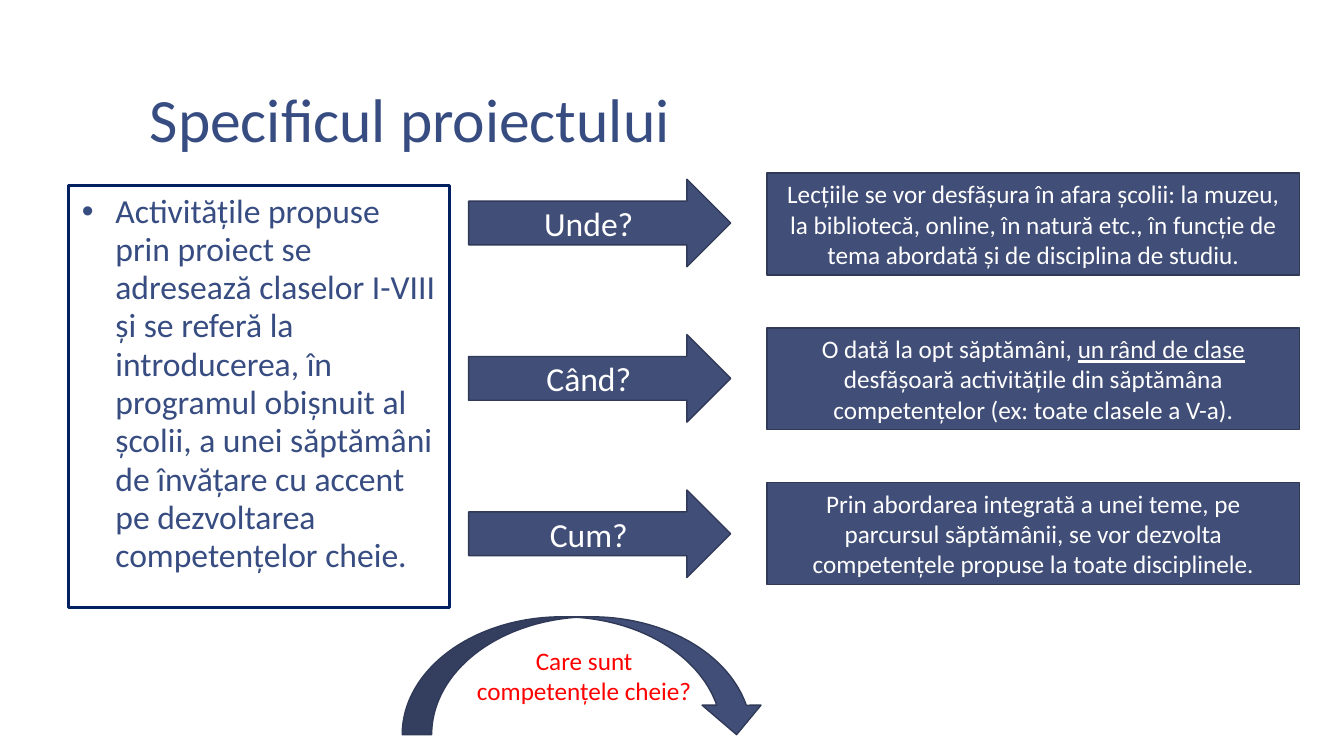
from pptx import Presentation
from pptx.dml.color import RGBColor
from pptx.enum.shapes import MSO_SHAPE
from pptx.enum.text import MSO_ANCHOR, MSO_AUTO_SIZE, PP_ALIGN
from pptx.oxml import parse_xml
from pptx.oxml.ns import nsdecls
from pptx.util import Pt

# Content
TITLE = "Specificul proiectului"
INTRO = ("Activitățile propuse prin proiect se adresează claselor I-VIII și se referă "
         "la introducerea, în programul obișnuit al școlii, a unei săptămâni de învățare "
         "cu accent pe dezvoltarea competențelor cheie.")
# Question and its answer, given as (text, underlined) runs
ROWS = [
    ("Unde?", [("Lecțiile se vor desfășura în afara școlii: la muzeu, la bibliotecă, online, "
                "în natură etc., în funcție de tema abordată și de disciplina de studiu.", False)]),
    ("Când?", [("O dată la opt săptămâni, ", False),
               ("un rând de clase ", True),
               ("desfășoară activitățile din săptămâna competențelor "
                "(ex: toate clasele a V-a).", False)]),
    ("Cum?", [("Prin abordarea integrată a unei teme, pe parcursul săptămânii, se vor dezvolta "
               "competențele propuse la toate disciplinele.", False)]),
]
KEY_QUESTION = ["Care sunt", "competențele cheie?"]

FONT = "Calibri"
BLUE, FILL, EDGE, NAVY, WHITE, RED = "374C81", "414E77", "303A58", "002060", "FFFFFF", "FF0000"


def color(value):
    return RGBColor.from_string(value)


def write(p, text, size=18, ink=WHITE, align=PP_ALIGN.CENTER, spacing=None, underline=None):
    """Add a formatted run to a paragraph."""
    p.alignment = align
    if spacing:
        p.line_spacing = spacing
    r = p.add_run()
    r.text = text
    r.font.name, r.font.size, r.font.underline = FONT, Pt(size), underline
    r.font.color.rgb = color(ink)


def add_box(s, kind, left, top, width, height, fill=FILL, line=EDGE, weight=1):
    sp = s.shapes.add_shape(kind, Pt(left), Pt(top), Pt(width), Pt(height))
    sp.shadow.inherit = False
    if fill:
        sp.fill.solid()
        sp.fill.fore_color.rgb = color(fill)
    else:
        sp.fill.background()
    sp.line.color.rgb = color(line)
    sp.line.width = Pt(weight)
    tf = sp.text_frame
    tf.word_wrap = True
    tf.vertical_anchor = MSO_ANCHOR.MIDDLE
    return tf


def set_insets(tf, left, top, right, bottom):
    tf.margin_left, tf.margin_top = Pt(left), Pt(top)
    tf.margin_right, tf.margin_bottom = Pt(right), Pt(bottom)


prs = Presentation()
prs.slide_width, prs.slide_height = Pt(960), Pt(540)
s = prs.slides.add_slide(prs.slide_layouts[5])

# Title
title = s.shapes.title
title.left, title.top, title.width, title.height = Pt(88), Pt(6), Pt(800), Pt(110)
tf = title.text_frame
tf.auto_size = MSO_AUTO_SIZE.NONE
tf.vertical_anchor = MSO_ANCHOR.BOTTOM
set_insets(tf, 19, 5, 9.4, 5)
write(tf.paragraphs[0], TITLE, size=44, ink=BLUE, align=PP_ALIGN.LEFT, spacing=0.85)

# Bulleted introduction
tf = add_box(s, MSO_SHAPE.RECTANGLE, 49, 132.5, 272.2, 301.7, fill=None, line=NAVY, weight=2.25)
tf.vertical_anchor = MSO_ANCHOR.TOP
set_insets(tf, 9.4, 5, 9.4, 5)
p = tf.paragraphs[0]
pPr = p._p.get_or_add_pPr()
pPr.set("marL", str(Pt(24)))
pPr.set("indent", str(Pt(-24)))
pPr.append(parse_xml(f'<a:buFont {nsdecls("a")} typeface="Arial"/>'))
pPr.append(parse_xml(f'<a:buChar {nsdecls("a")} char="•"/>'))
write(p, INTRO, size=24, ink=BLUE, align=PP_ALIGN.LEFT, spacing=0.95)

# Question arrows and answers
for i, (question, answer) in enumerate(ROWS):
    tf = add_box(s, MSO_SHAPE.RIGHT_ARROW, 334.8, 128 + 111 * i, 187.2, 62.6)
    write(tf.paragraphs[0], question, size=24)
    tf = add_box(s, MSO_SHAPE.RECTANGLE, 548, 123.7 + 110.5 * i, 380.2, 72.7)
    for text, underlined in answer:
        write(tf.paragraphs[0], text, underline=underlined)

# Curved arrow with the closing question
tf = add_box(s, MSO_SHAPE.CURVED_DOWN_ARROW, 287.3, 440.6, 259.9, 84.2)
for i, text in enumerate(KEY_QUESTION):
    write(tf.add_paragraph() if i else tf.paragraphs[0], text, ink=RED)

prs.save("out.pptx")
